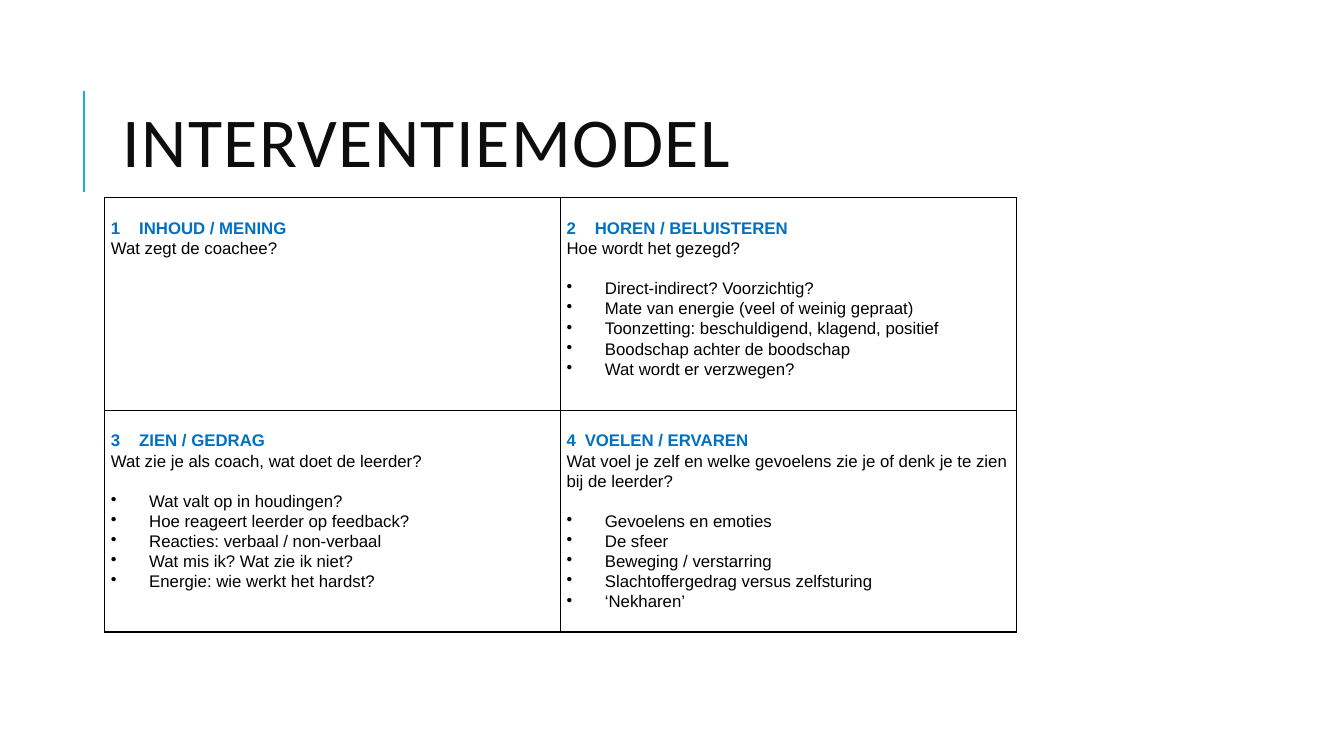
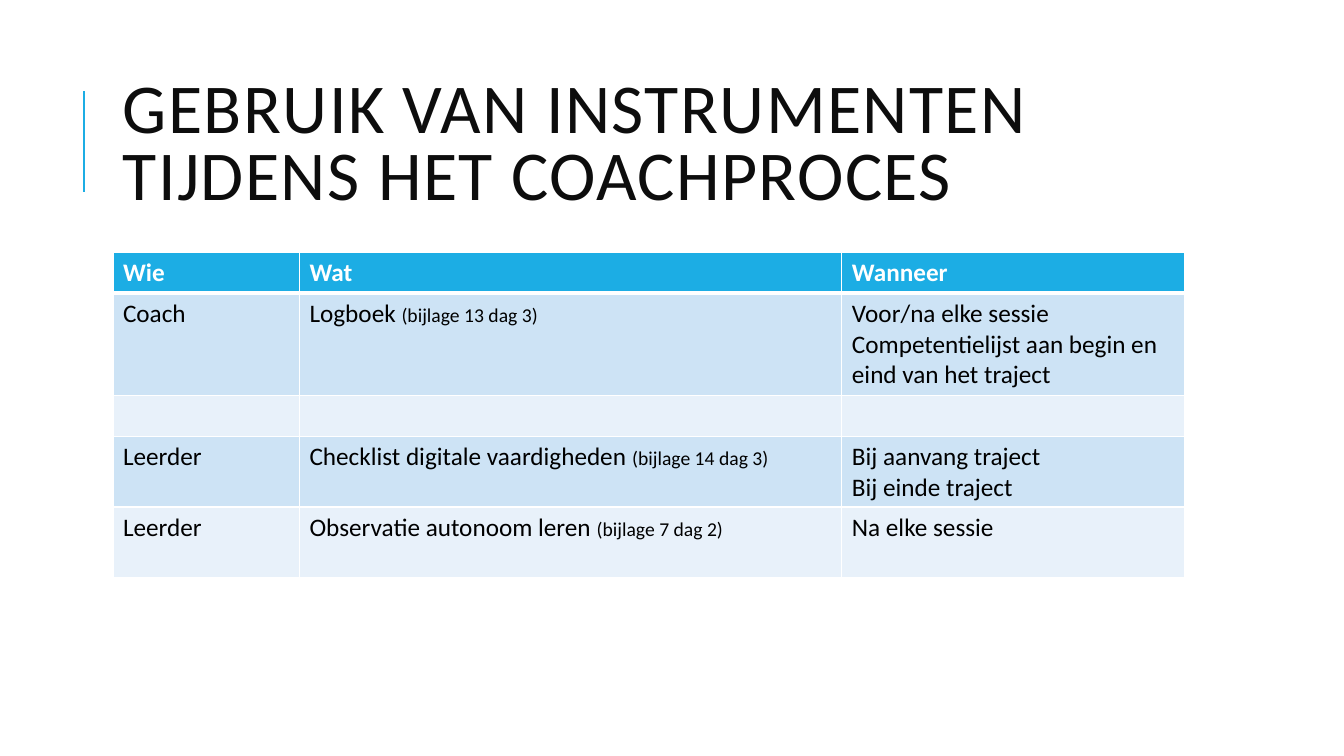
"""Build two coaching slides: an intervention model and an overview of instruments."""
from lxml.etree import SubElement
from pptx import Presentation
from pptx.dml.color import RGBColor
from pptx.enum.shapes import MSO_CONNECTOR as Connector
from pptx.enum.text import MSO_ANCHOR as Anchor
from pptx.oxml.ns import qn
from pptx.util import Inches, Pt

WIDTH, HEIGHT = Inches(13.33), Inches(7.5)
ACCENT = RGBColor(0x1C, 0xAD, 0xE4)
TITLE_INK = RGBColor(0x0D, 0x0D, 0x0D)
HEADING_BLUE = RGBColor(0x00, 0x70, 0xC0)
BLACK = RGBColor(0x00, 0x00, 0x00)
WHITE = RGBColor(0xFF, 0xFF, 0xFF)
BANDS = (RGBColor(0xCD, 0xE3, 0xF5), RGBColor(0xE8, 0xF1, 0xFA))
TITLE_FONT, MODEL_FONT = "Calibri", "Arial"

TITLE_LEFT, TITLE_WIDTH = Inches(1.12), Inches(10.63)
BULLET_INDENT = Inches(0.38)
BLANK_LINE = Pt(14.4)

QUADRANTS = [
    [
        ("1", "INHOUD / MENING", 0.28, "Wat zegt de coachee?", []),
        ("2", "HOREN / BELUISTEREN", 0.28, "Hoe wordt het gezegd?", [
            "Direct-indirect? Voorzichtig?",
            "Mate van energie (veel of weinig gepraat)",
            "Toonzetting: beschuldigend, klagend, positief",
            "Boodschap achter de boodschap",
            "Wat wordt er verzwegen?",
        ]),
    ],
    [
        ("3", "ZIEN / GEDRAG", 0.28, "Wat zie je als coach, wat doet de leerder?", [
            "Wat valt op in houdingen?",
            "Hoe reageert leerder op feedback?",
            "Reacties: verbaal / non-verbaal",
            "Wat mis ik? Wat zie ik niet?",
            "Energie: wie werkt het hardst?",
        ]),
        ("4", "VOELEN / ERVAREN", 0.18,
         "Wat voel je zelf en welke gevoelens zie je of denk je te zien bij de leerder?", [
             "Gevoelens en emoties",
             "De sfeer",
             "Beweging / verstarring",
             "Slachtoffergedrag versus zelfsturing",
             "‘Nekharen’",
         ]),
    ],
]

HEADER = ("Wie", "Wat", "Wanneer")
INSTRUMENTS = [
    ("Coach", "Logboek ", "(bijlage 13 dag 3)",
     ["Voor/na elke sessie", "Competentielijst aan begin en eind van het traject"]),
    None,
    ("Leerder", "Checklist digitale vaardigheden ", "(bijlage 14 dag 3)",
     ["Bij aanvang traject", "Bij einde traject"]),
    ("Leerder", "Observatie autonoom leren ", "(bijlage 7 dag 2)", ["Na elke sessie"]),
]


def style(paragraph, font, size, color, bold=False):
    """Set the font of a whole paragraph."""
    paragraph.font.name = font
    paragraph.font.size = Pt(size)
    paragraph.font.color.rgb = color
    paragraph.font.bold = bold


def add_titled_slide(deck, title):
    """Add a blank slide with the accent rule and the title."""
    slide = deck.slides.add_slide(deck.slide_layouts[6])
    rule = slide.shapes.add_connector(
        Connector.STRAIGHT, Inches(0.83), Inches(1.9), Inches(0.83), Inches(0.9))
    rule.line.color.rgb = ACCENT
    rule.line.width = Pt(1.5)
    SubElement(rule._element.spPr, qn("a:effectLst"))

    frame = slide.shapes.add_textbox(
        TITLE_LEFT, Inches(0.64), TITLE_WIDTH, Inches(1.64)).text_frame
    frame.word_wrap = True
    frame.vertical_anchor = Anchor.MIDDLE
    heading = frame.paragraphs[0]
    heading.line_spacing = 0.8
    style(heading, TITLE_FONT, 50, TITLE_INK)
    letters = heading.add_run()
    letters.text = title
    letters._r.get_or_add_rPr().set("spc", "100")
    return slide


def add_grid(slide, left, top, columns, rows):
    """Add an unbanded table with column widths and row heights in inches."""
    grid = slide.shapes.add_table(
        len(rows), len(columns), left, top,
        Inches(sum(columns)), Inches(sum(rows))).table
    grid.first_row = grid.horz_banding = False
    for column, width in zip(grid.columns, columns):
        column.width = Inches(width)
    for row, height in zip(grid.rows, rows):
        row.height = Inches(height)
    return grid


def set_borders(cell, color, top=1, bottom=1):
    """Draw the four borders of a cell, with widths in points."""
    properties = cell._tc.get_or_add_tcPr()
    for side, width in (("L", 1), ("R", 1), ("T", top), ("B", bottom)):
        border = SubElement(properties, qn(f"a:ln{side}"), w=str(Pt(width)))
        fill = SubElement(border, qn("a:solidFill"))
        SubElement(fill, qn("a:srgbClr"), val=str(color))


def set_tab(paragraph, inches):
    """Give a paragraph one left tab stop."""
    stops = SubElement(paragraph._p.get_or_add_pPr(), qn("a:tabLst"))
    SubElement(stops, qn("a:tab"), pos=str(Inches(inches)), algn="l")


def set_bullet(paragraph):
    """Give a paragraph a hanging round bullet."""
    properties = paragraph._p.get_or_add_pPr()
    properties.set("marL", str(BULLET_INDENT))
    properties.set("indent", str(-BULLET_INDENT))
    SubElement(properties, qn("a:buChar"), char="•")


def fill_quadrant(cell, number, name, tab, question, points):
    """Write the heading, question and bullets of one quadrant."""
    set_borders(cell, BLACK)
    cell.fill.background()
    cell.margin_left = cell.margin_right = Inches(0.06)
    cell.margin_top, cell.margin_bottom = Inches(0.2), 0
    frame = cell.text_frame
    heading = frame.paragraphs[0]
    heading.text = f"{number}\t{name}"
    set_tab(heading, tab)
    style(heading, MODEL_FONT, 12, HEADING_BLUE, bold=True)
    heading.line_spacing = 1.07
    for position, text in enumerate([question, *points]):
        line = frame.add_paragraph()
        line.text = text
        line.line_spacing = 1.07
        if position == 1:
            line.space_before = BLANK_LINE
        if position:
            set_bullet(line)
        style(line, MODEL_FONT, 12, BLACK)


def fill_cell(cell, fill, lines=(), note="", header=False):
    """Fill an instrument cell with lines and an optional smaller note."""
    set_borders(cell, WHITE, bottom=3 if header else 1)
    cell.fill.solid()
    cell.fill.fore_color.rgb = fill
    cell.text = "\n".join(lines)
    for paragraph in cell.text_frame.paragraphs:
        style(paragraph, TITLE_FONT, 18, WHITE if header else BLACK, bold=header)
    if note:
        remark = cell.text_frame.paragraphs[-1].add_run()
        remark.text = note
        remark.font.size = Pt(14)


def build_model(deck):
    """Build the slide with the four quadrants."""
    slide = add_titled_slide(deck, "INTERVENTIEMODEL")
    grid = add_grid(slide, Inches(1.04), Inches(1.96), [4.52] * 2, [2.11, 2.2])
    for row, quadrants in enumerate(QUADRANTS):
        for column, quadrant in enumerate(quadrants):
            fill_quadrant(grid.cell(row, column), *quadrant)


def build_instruments(deck):
    """Build the slide with the table of instruments."""
    slide = add_titled_slide(deck, "GEBRUIK VAN INSTRUMENTEN TIJDENS HET COACHPROCES")
    grid = add_grid(slide, TITLE_LEFT, Inches(2.5),
                    [1.85, 5.38, 3.4], [0.41, 1.01, 0.41, 0.7, 0.7])
    for column, label in enumerate(HEADER):
        fill_cell(grid.cell(0, column), ACCENT, [label], header=True)
    for row, instrument in enumerate(INSTRUMENTS, 1):
        who, what, note, moments = instrument or ("", "", "", [])
        band = BANDS[(row - 1) % 2]
        fill_cell(grid.cell(row, 0), band, [who])
        fill_cell(grid.cell(row, 1), band, [what], note)
        fill_cell(grid.cell(row, 2), band, moments)


def main():
    """Build and save the presentation."""
    deck = Presentation()
    deck.slide_width, deck.slide_height = WIDTH, HEIGHT
    build_model(deck)
    build_instruments(deck)
    deck.save("out.pptx")


if __name__ == "__main__":
    main()
